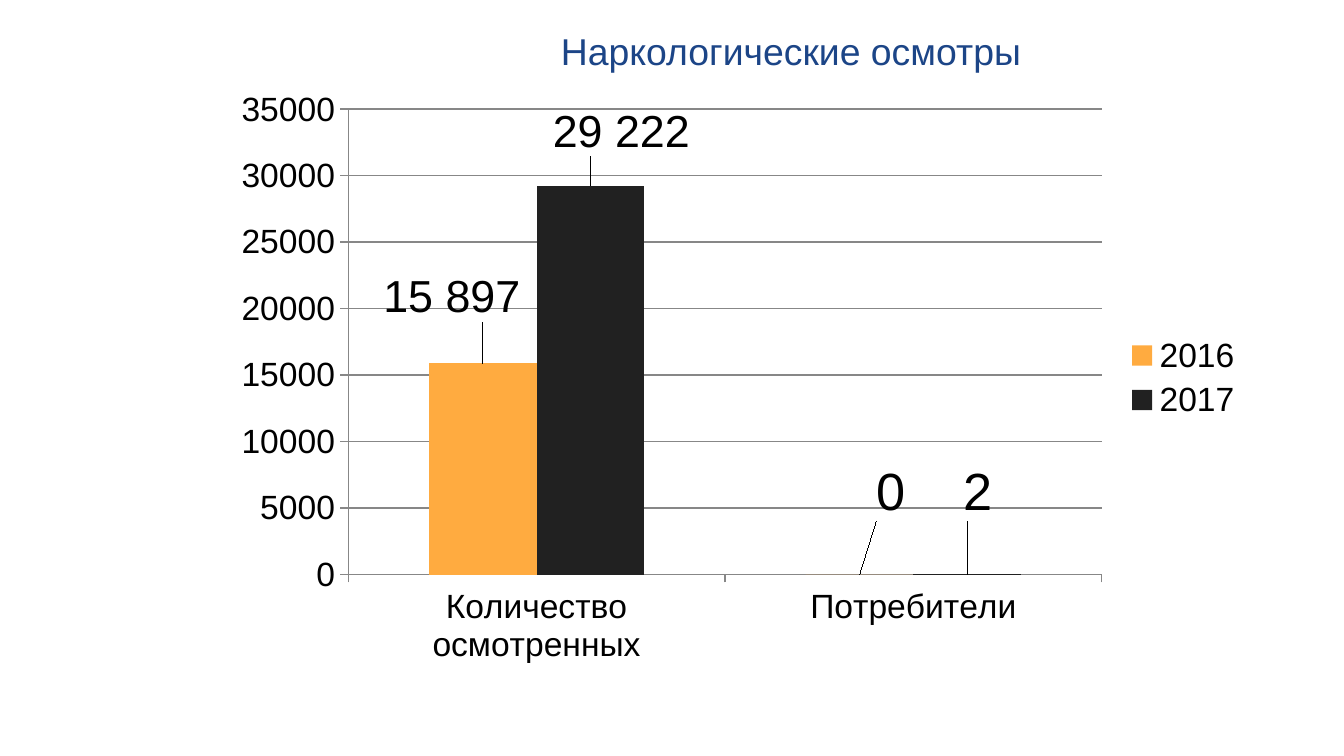
from lxml import etree
from pptx import Presentation
from pptx.chart.data import CategoryChartData
from pptx.dml.color import RGBColor
from pptx.enum.chart import XL_CHART_TYPE, XL_LABEL_POSITION, XL_LEGEND_POSITION, XL_TICK_MARK
from pptx.enum.text import MSO_ANCHOR, PP_ALIGN
from pptx.oxml.ns import qn
from pptx.util import Cm, Pt

COLUMNS = XL_CHART_TYPE.COLUMN_CLUSTERED
OUTSIDE_END = XL_LABEL_POSITION.OUTSIDE_END
RIGHT = XL_LEGEND_POSITION.RIGHT
TICK_OUT = XL_TICK_MARK.OUTSIDE
MIDDLE = MSO_ANCHOR.MIDDLE
CENTER = PP_ALIGN.CENTER

CATEGORIES = ["Количество осмотренных", "Потребители"]
LABEL_SIZES = [24, 28]
# Each label: text, then its shift as a fraction of the chart's width and height
SERIES = [
    ("2016", "FFAB40", [15897, 0], [("15 897", -0.03, -0.06), ("0", 0.03, -0.08)]),
    ("2017", "212121", [29222, 2], [("29 222", 0.03, -0.04), ("2", 0.01, -0.08)]),
]


def rgb(value):
    return RGBColor.from_string(value)


def manual_layout(**values):
    """Return a c:layout element; values are children of c:manualLayout in schema order."""
    layout = etree.Element(qn("c:layout"))
    manual = etree.SubElement(layout, qn("c:manualLayout"))
    for tag, value in values.items():
        etree.SubElement(manual, qn(f"c:{tag}")).set("val", str(value))
    return layout


class Deck:
    font = "Arial"
    ink = "000000"
    title_color = "1C4587"
    grid_color = "878787"

    def __init__(self, width, height):
        self.prs = Presentation()
        self.prs.slide_width, self.prs.slide_height = width, height

    def add_slide(self):
        self.s = self.prs.slides.add_slide(self.prs.slide_layouts[5])

    def style(self, font, size, color):
        font.name, font.size = self.font, Pt(size)
        font.color.rgb = rgb(color)

    def title(self, text, left, top, width, height):
        sp = self.s.shapes.title
        sp.left, sp.top, sp.width, sp.height = left, top, width, height
        tf = sp.text_frame
        tf.vertical_anchor = MIDDLE
        p = tf.paragraphs[0]
        p.alignment = CENTER
        r = p.add_run()
        r.text = text
        self.style(r.font, 20, self.title_color)

    def column_chart(self, left, top, width, height):
        data = CategoryChartData()
        data.categories = CATEGORIES
        for name, _, values, _ in SERIES:
            data.add_series(name, values)
        chart = self.s.shapes.add_chart(COLUMNS, left, top, width, height, data).chart
        chart.has_title = False
        self.style(chart.font, 18, self.ink)
        chart.has_legend = True
        chart.legend.position = RIGHT
        chart.legend.include_in_layout = False

        plot = chart.plots[0]
        plot.gap_width, plot.overlap = 150, 0
        plot.vary_by_categories = False
        for series, (_, color, _, labels) in zip(plot.series, SERIES):
            series.format.fill.solid()
            series.format.fill.fore_color.rgb = rgb(color)
            series.data_labels.show_value = True
            for i, label in enumerate(labels):
                self.point_label(series, i, *label)

        self.axis(chart.category_axis)
        value_axis = chart.value_axis
        self.axis(value_axis)
        value_axis.minimum_scale, value_axis.maximum_scale = 0, 35000
        value_axis.major_unit = 5000
        value_axis.has_major_gridlines = True
        self.line(value_axis.major_gridlines.format.line)

        area = chart.element.find(".//" + qn("c:plotArea"))
        for old in area.findall(qn("c:layout")):
            area.remove(old)
        area.insert(0, manual_layout(layoutTarget="inner", xMode="edge", yMode="edge",
                                     x=0.12, y=0.05, w=0.73, h=0.78))

    def point_label(self, series, i, text, dx, dy):
        label = series.points[i].data_label
        tf = label.text_frame
        tf.word_wrap = False
        r = tf.paragraphs[0].add_run()
        r.text = text
        self.style(r.font, LABEL_SIZES[i], self.ink)
        label.position = OUTSIDE_END
        idx = series.data_labels._element.findall(qn("c:dLbl"))[i].find(qn("c:idx"))
        idx.addnext(manual_layout(x=dx, y=dy))

    def axis(self, axis):
        axis.major_tick_mark = TICK_OUT
        self.line(axis.format.line)

    def line(self, line):
        line.color.rgb = rgb(self.grid_color)
        line.width = Pt(0.75)


def main():
    deck = Deck(Cm(25.4), Cm(14.29))
    deck.add_slide()
    deck.title("Наркологические осмотры", Cm(6.15), Cm(0.25), Cm(17.6), Cm(1.42))
    deck.column_chart(Cm(4.24), Cm(1.5), Cm(19.51), Cm(11.28))
    deck.prs.save("out.pptx")


if __name__ == "__main__":
    main()
